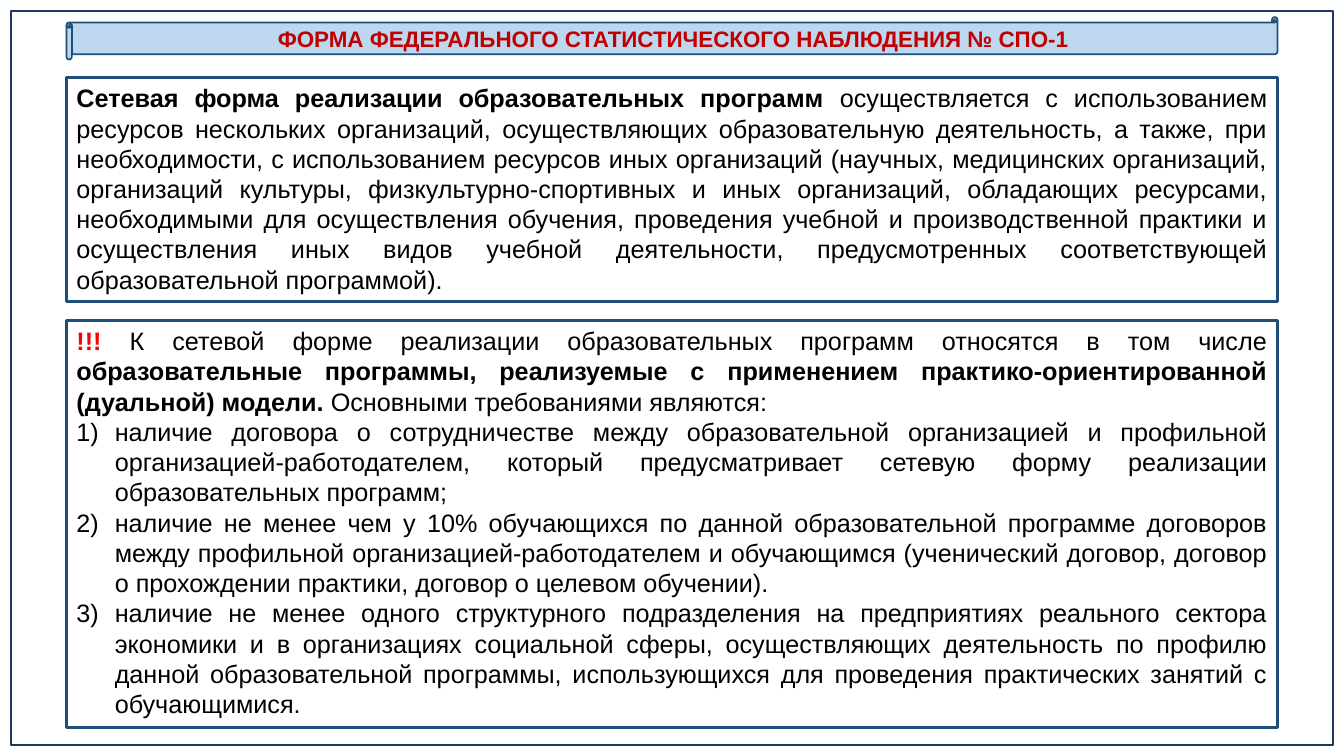
from lxml import etree
from pptx import Presentation
from pptx.dml.color import RGBColor
from pptx.enum.shapes import MSO_SHAPE
from pptx.enum.text import MSO_ANCHOR, PP_ALIGN
from pptx.oxml.ns import qn
from pptx.util import Inches, Pt

RECT, SCROLL = MSO_SHAPE.RECTANGLE, MSO_SHAPE.HORIZONTAL_SCROLL
TOP, MIDDLE = MSO_ANCHOR.TOP, MSO_ANCHOR.MIDDLE
CENTER, JUSTIFY = PP_ALIGN.CENTER, PP_ALIGN.JUSTIFY

NAVY = RGBColor(0x20, 0x38, 0x64)
BLUE = RGBColor(0x1F, 0x4E, 0x79)
PALE_BLUE = RGBColor(0xBD, 0xD7, 0xEE)
DARK_RED = RGBColor(0xC0, 0x00, 0x00)
RED = RGBColor(0xFF, 0x00, 0x00)
BLACK = RGBColor(0x00, 0x00, 0x00)

LEFT, WIDTH = 0.66, 12.01
INDENT = 0.38

TITLE = "ФОРМА ФЕДЕРАЛЬНОГО СТАТИСТИЧЕСКОГО НАБЛЮДЕНИЯ № СПО-1"
# Each run is (text, bold, colour)
DEFINITION = [
    ("Сетевая форма реализации образовательных программ", True, BLACK),
    (" осуществляется с использованием ресурсов нескольких организаций, "
     "осуществляющих образовательную деятельность, а также, при необходимости, "
     "с использованием ресурсов иных организаций (научных, медицинских организаций, "
     "организаций культуры, физкультурно-спортивных и иных организаций, обладающих "
     "ресурсами, необходимыми для осуществления обучения, проведения учебной и "
     "производственной практики и осуществления иных видов учебной деятельности, "
     "предусмотренных соответствующей образовательной программой).", False, BLACK),
]
DUAL_MODEL = [
    ("!!! ", True, RED),
    ("К сетевой форме реализации образовательных программ относятся в том числе ",
     False, BLACK),
    ("образовательные программы, реализуемые с применением "
     "практико-ориентированной (дуальной) модели. ", True, BLACK),
    ("Основными требованиями являются: ", False, BLACK),
]
REQUIREMENTS = [
    "наличие договора о сотрудничестве между образовательной организацией и "
    "профильной организацией-работодателем, который предусматривает сетевую форму "
    "реализации образовательных программ; ",
    "наличие не менее чем у 10% обучающихся по данной образовательной программе "
    "договоров между профильной организацией-работодателем и обучающимся "
    "(ученический договор, договор о прохождении практики, договор о целевом "
    "обучении).",
    "наличие не менее одного структурного подразделения на предприятиях реального "
    "сектора экономики и в организациях социальной сферы, осуществляющих "
    "деятельность по профилю данной образовательной программы, использующихся для "
    "проведения практических занятий с обучающимися. ",
]


class SlideBuilder:
    font = "Arial"

    def __init__(self, slide):
        self.s = slide

    def box(self, kind, x, y, w, h, line, weight, fill=None, anchor=TOP):
        sp = self.s.shapes.add_shape(kind, Inches(x), Inches(y), Inches(w), Inches(h))
        sp.shadow.inherit = False
        if fill is None:
            sp.fill.background()
        else:
            sp.fill.solid()
            sp.fill.fore_color.rgb = fill
        sp.line.color.rgb = line
        sp.line.width = Pt(weight)
        sp.text_frame.word_wrap = True
        sp.text_frame.vertical_anchor = anchor
        return sp

    def paragraph(self, p, runs, size, align):
        p.alignment = align
        for text, bold, color in runs:
            r = p.add_run()
            r.text = text
            r.font.name = self.font
            r.font.size = Pt(size)
            r.font.bold = bold
            r.font.color.rgb = color

    def number(self, p):
        """Make the paragraph an item of a 1) 2) 3) list."""
        pPr = p._p.get_or_add_pPr()
        pPr.set("marL", str(Inches(INDENT)))
        pPr.set("indent", str(-Inches(INDENT)))
        etree.SubElement(pPr, qn("a:buFont"), typeface="+mj-lt")
        etree.SubElement(pPr, qn("a:buAutoNum"), type="arabicParenR")

    def text_panel(self, y, h, intro, items=()):
        """Outlined panel with an opening paragraph and a numbered list."""
        tf = self.box(RECT, LEFT, y, WIDTH, h, BLUE, 2).text_frame
        self.paragraph(tf.paragraphs[0], intro, 18, JUSTIFY)
        for item in items:
            p = tf.add_paragraph()
            self.paragraph(p, [(item, False, BLACK)], 18, JUSTIFY)
            self.number(p)


def main():
    prs = Presentation()
    prs.slide_width, prs.slide_height = Inches(13.33), Inches(7.5)
    b = SlideBuilder(prs.slides.add_slide(prs.slide_layouts[6]))

    b.box(RECT, 0.11, 0.11, 13.11, 7.28, NAVY, 1.5)
    banner = b.box(SCROLL, LEFT, 0.17, WIDTH, 0.42, BLUE, 1.25, PALE_BLUE, MIDDLE)
    b.paragraph(banner.text_frame.paragraphs[0], [(TITLE, True, DARK_RED)], 16, CENTER)
    b.text_panel(3.18, 4.04, DUAL_MODEL, REQUIREMENTS)
    b.text_panel(0.77, 2.22, DEFINITION)

    prs.save("out.pptx")


if __name__ == "__main__":
    main()
